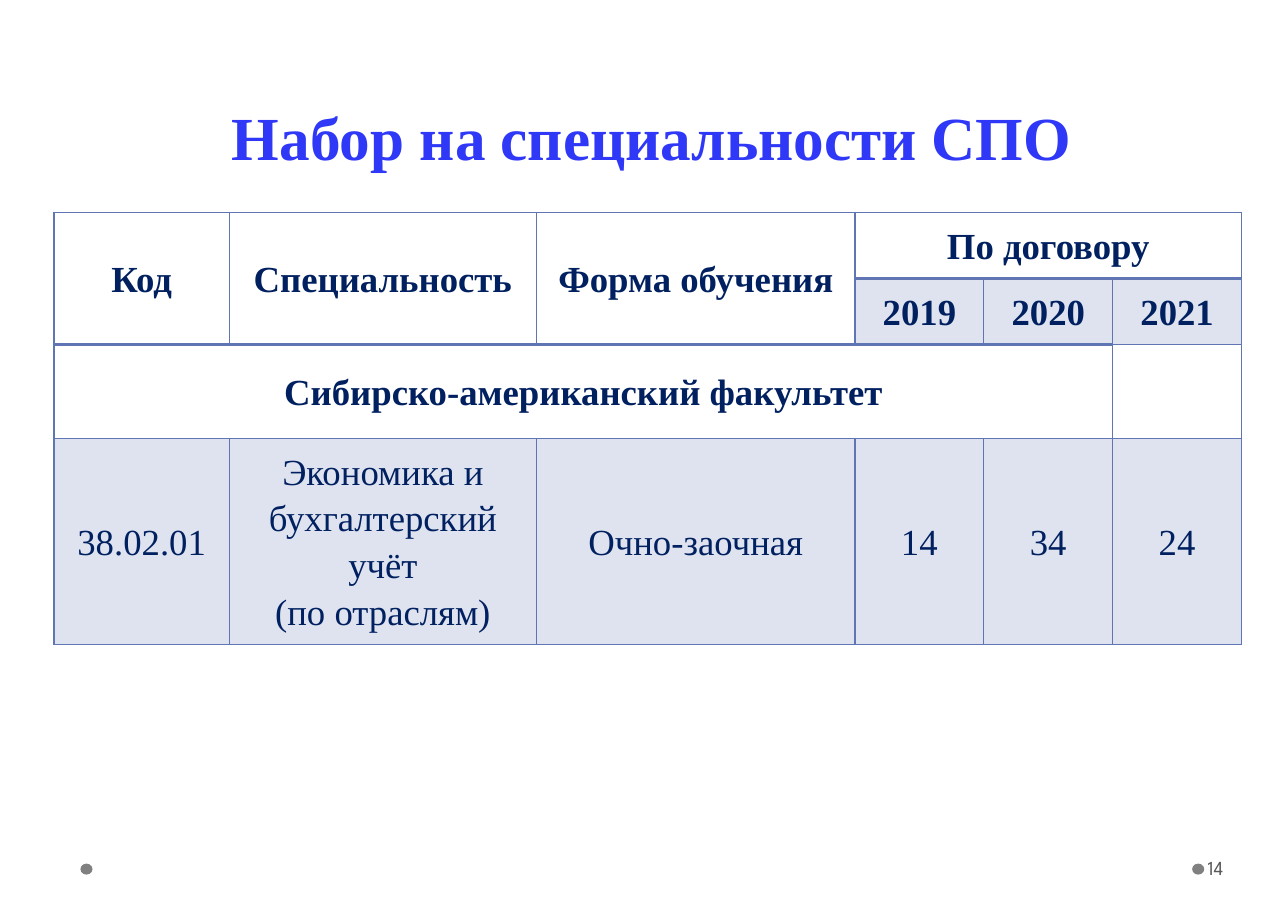
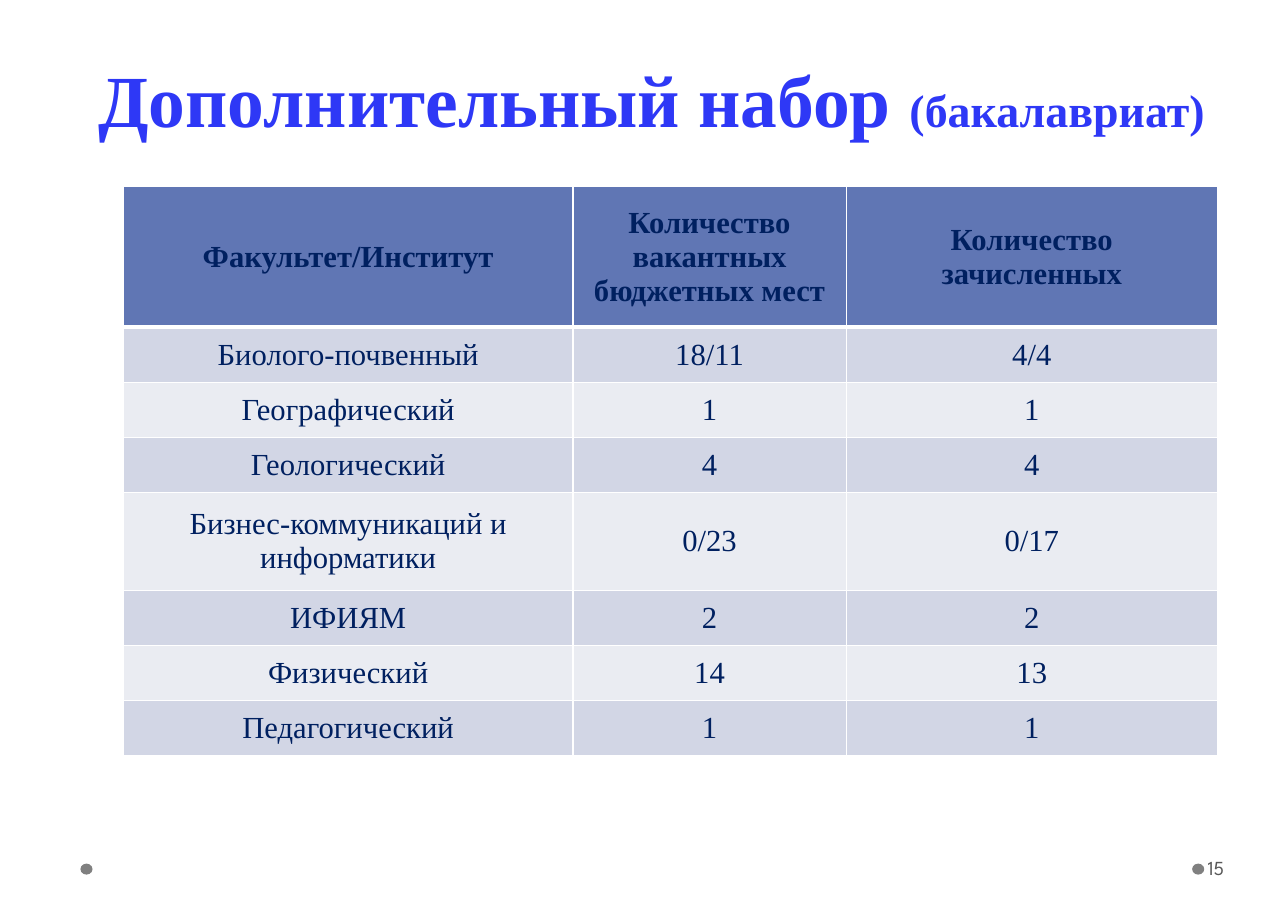
from collections.abc import Sequence
from dataclasses import dataclass, field
from typing import Any

from lxml.etree import SubElement
from pptx import Presentation
from pptx.dml.color import RGBColor
from pptx.enum.shapes import MSO_SHAPE
from pptx.enum.text import MSO_ANCHOR, MSO_AUTO_SIZE, PP_ALIGN
from pptx.oxml import parse_xml
from pptx.oxml.ns import nsdecls, qn
from pptx.util import Inches, Pt


@dataclass(frozen=True)
class Theme:
    serif: str = "Times New Roman"
    sans: str = "League Spartan"
    title: str = "2E38F6"
    ink: str = "002060"
    accent: str = "6076B4"
    band_dark: str = "D2D6E5"
    band_light: str = "EAECF2"
    white: str = "FFFFFF"
    dot: str = "808080"
    page: str = "595959"
    title_leading: float = 63.2
    page_size: int = 13


THEME = Theme()


@dataclass(frozen=True)
class Fill:
    color: str
    opacity: int = 100


@dataclass(frozen=True)
class TitlePart:
    text: str
    size: int


@dataclass(frozen=True)
class Merge:
    first: tuple[int, int]
    last: tuple[int, int]


@dataclass(frozen=True)
class TableSpec:
    left: float
    top: float
    columns: Sequence[float]
    rows: Sequence[float]
    texts: Sequence[Sequence[str]]
    fills: Sequence[Sequence[Fill | None]]
    bold_rows: int
    size: int
    border: str
    header_line: int
    line_spacing: float = 1.0
    margins: dict[str, float] = field(default_factory=dict)
    merges: Sequence[Merge] = ()


@dataclass(frozen=True)
class SlideSpec:
    page: int
    title: Sequence[TitlePart]
    title_top: float
    title_height: float
    table: TableSpec


def set_values(target: Any, values: dict[str, Any]) -> None:
    for name, value in values.items():
        setattr(target, name, value)


def style_font(font: Any, face: str, size: float, color: str, bold: bool = False) -> None:
    set_values(font, {"name": face, "size": Pt(size), "bold": bold})
    font.color.rgb = RGBColor.from_string(color)


def add_dots(slide: Any, layout: Any) -> None:
    """Draw the two footer dots and keep them on the layout, so every slide shows them."""
    layout_tree = layout.placeholders[0].element.getparent()
    for number, left in enumerate((0.73, 10.82)):
        dot = slide.shapes.add_shape(
            MSO_SHAPE.OVAL, Inches(left), Inches(7.84), Inches(0.11), Inches(0.1)
        )
        dot.shadow.inherit = False
        dot.fill.solid()
        dot.fill.fore_color.rgb = RGBColor.from_string(THEME.dot)
        dot.line.fill.background()
        dot.element.nvSpPr.cNvPr.set("id", str(100 + number))
        layout_tree.append(dot.element)


def add_title(slide: Any, spec: SlideSpec) -> None:
    title = slide.shapes.title
    set_values(title, {
        "left": Inches(0.65), "top": Inches(spec.title_top),
        "width": Inches(10.53), "height": Inches(spec.title_height),
    })
    frame = title.text_frame
    set_values(frame, {
        "word_wrap": True, "auto_size": MSO_AUTO_SIZE.NONE,
        "vertical_anchor": MSO_ANCHOR.BOTTOM,
        "margin_left": Inches(0.11), "margin_right": Inches(0.11),
        "margin_top": Inches(0.05), "margin_bottom": Inches(0.05),
    })
    heading = frame.paragraphs[0]
    set_values(heading, {
        "alignment": PP_ALIGN.CENTER, "line_spacing": Pt(THEME.title_leading),
    })
    for part in spec.title:
        run = heading.add_run()
        run.text = part.text
        style_font(run.font, THEME.serif, part.size, THEME.title, bold=True)


def add_page_number(slide: Any, page: int) -> None:
    frame = slide.shapes.add_textbox(
        Inches(10.93), Inches(7.66), Inches(0.72), Inches(0.44)
    ).text_frame
    set_values(frame, {
        "word_wrap": True, "vertical_anchor": MSO_ANCHOR.MIDDLE,
        "margin_left": Inches(0.03), "margin_right": Inches(0.05),
    })
    run = frame.paragraphs[0].add_run()
    run.text = str(page)
    style_font(run.font, THEME.sans, THEME.page_size, THEME.page)


def set_borders(cell: Any, color: str, widths: dict[str, int]) -> None:
    properties = cell._tc.get_or_add_tcPr()
    for side, width in widths.items():
        properties.append(parse_xml(
            f'<a:{side} {nsdecls("a")} w="{Pt(width)}"><a:solidFill>'
            f'<a:srgbClr val="{color}"/></a:solidFill></a:{side}>'
        ))


def set_fill(cell: Any, fill: Fill | None) -> None:
    if fill is None:
        cell.fill.background()
        return
    cell.fill.solid()
    cell.fill.fore_color.rgb = RGBColor.from_string(fill.color)
    if fill.opacity < 100:
        color = cell._tc.tcPr.find(f'{qn("a:solidFill")}/{qn("a:srgbClr")}')
        SubElement(color, qn("a:alpha")).set("val", str(fill.opacity * 1000))


def write_cell(cell: Any, text: str, spec: TableSpec, bold: bool) -> None:
    set_values(cell, {"vertical_anchor": MSO_ANCHOR.MIDDLE})
    set_values(cell, {name: Inches(value) for name, value in spec.margins.items()})
    if not text:
        return
    paragraph = cell.text_frame.paragraphs[0]
    paragraph.text = text
    set_values(paragraph, {
        "alignment": PP_ALIGN.CENTER, "line_spacing": spec.line_spacing,
    })
    for run in paragraph.runs:
        style_font(run.font, THEME.serif, spec.size, THEME.ink, bold)


def add_grid(slide: Any, spec: TableSpec) -> None:
    table = slide.shapes.add_table(
        len(spec.rows), len(spec.columns), Inches(spec.left), Inches(spec.top),
        Inches(sum(spec.columns)), Inches(sum(spec.rows)),
    ).table
    set_values(table, {"first_row": False, "horz_banding": False})
    for column, width in zip(table.columns, spec.columns):
        column.width = Inches(width)
    for row, height in zip(table.rows, spec.rows):
        row.height = Inches(height)
    for r, (texts, fills) in enumerate(zip(spec.texts, spec.fills)):
        borders = {
            "lnL": 1, "lnR": 1,
            "lnT": spec.header_line if r == 1 else 1,
            "lnB": spec.header_line if r == 0 else 1,
        }
        for c, (text, fill) in enumerate(zip(texts, fills)):
            cell = table.cell(r, c)
            write_cell(cell, text, spec, bold=r < spec.bold_rows)
            set_borders(cell, spec.border, borders)
            set_fill(cell, fill)
    for merge in spec.merges:
        table.cell(*merge.first).merge(table.cell(*merge.last))


TINT = Fill(THEME.accent, 20)
BANDS = (Fill(THEME.band_dark), Fill(THEME.band_light))

COLLEGE_INTAKE = TableSpec(
    left=0.49, top=1.93,
    columns=(1.59, 2.79, 2.89, 1.17, 1.17, 1.17),
    rows=(0.6, 0.6, 0.85, 1.87),
    texts=(
        ("Код", "Специальность", "Форма обучения", "По договору", "", ""),
        ("", "", "", "2019", "2020", "2021"),
        ("Сибирско-американский факультет", "", "", "", "", ""),
        ("38.02.01", "Экономика и бухгалтерский учёт\n(по отраслям)",
         "Очно-заочная", "14", "34", "24"),
    ),
    fills=((None,) * 6, (None,) * 3 + (TINT,) * 3, (None,) * 6, (TINT,) * 6),
    bold_rows=3, size=24, border=THEME.accent, header_line=2, line_spacing=1.15,
    margins={"margin_left": 0.07, "margin_right": 0.07,
             "margin_top": 0.07, "margin_bottom": 0.1},
    merges=(
        *(Merge((0, column), (1, column)) for column in range(3)),
        Merge((0, 3), (0, 5)),
        Merge((2, 0), (2, 4)),
    ),
)

EXTRA_INTAKE = TableSpec(
    left=1.12, top=1.69,
    columns=(4.08, 2.48, 3.37),
    rows=(1.28, 0.5, 0.5, 0.5, 0.89, 0.5, 0.5, 0.5),
    texts=(
        ("Факультет/Институт", "Количество вакантных бюджетных мест",
         "Количество зачисленных"),
        ("Биолого-почвенный", "18/11", "4/4"),
        ("Географический", "1", "1"),
        ("Геологический", "4", "4"),
        ("Бизнес-коммуникаций и информатики", "0/23", "0/17"),
        ("ИФИЯМ", "2", "2"),
        ("Физический", "14", "13"),
        ("Педагогический", "1", "1"),
    ),
    fills=((Fill(THEME.accent),) * 3, *((BANDS[row % 2],) * 3 for row in range(7))),
    bold_rows=1, size=20, border=THEME.white, header_line=3,
)

SLIDES = (
    SlideSpec(14, (TitlePart("Набор на специальности СПО", 40),),
              0.83, 0.79, COLLEGE_INTAKE),
    SlideSpec(15, (TitlePart("Дополнительный набор ", 48),
                   TitlePart("(бакалавриат)", 30)),
              0.28, 1.06, EXTRA_INTAKE),
)


def main() -> None:
    deck = Presentation()
    set_values(deck, {"slide_width": Inches(11.69), "slide_height": Inches(8.27)})
    title_only = deck.slide_layouts[5]
    for number, spec in enumerate(SLIDES):
        slide = deck.slides.add_slide(title_only)
        if number == 0:
            add_dots(slide, title_only)
        add_title(slide, spec)
        add_grid(slide, spec.table)
        add_page_number(slide, spec.page)
    deck.save("out.pptx")


if __name__ == "__main__":
    main()
